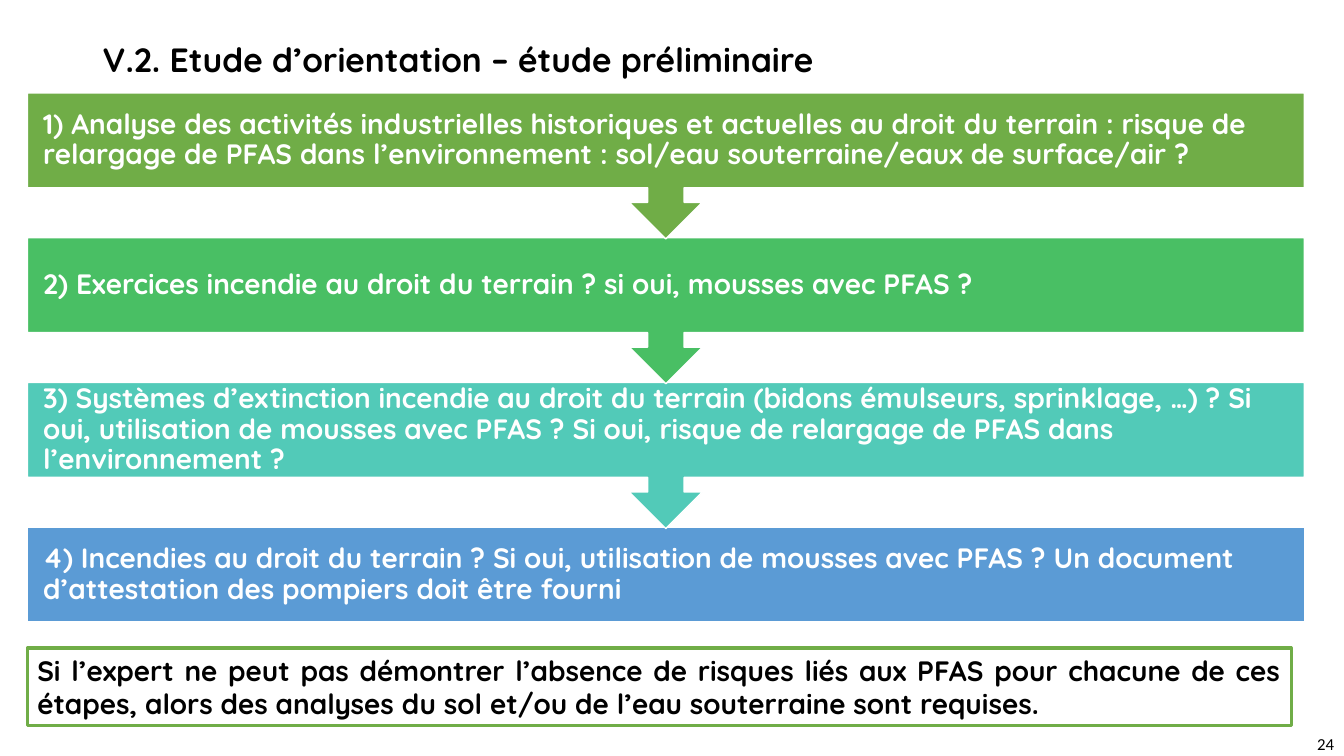
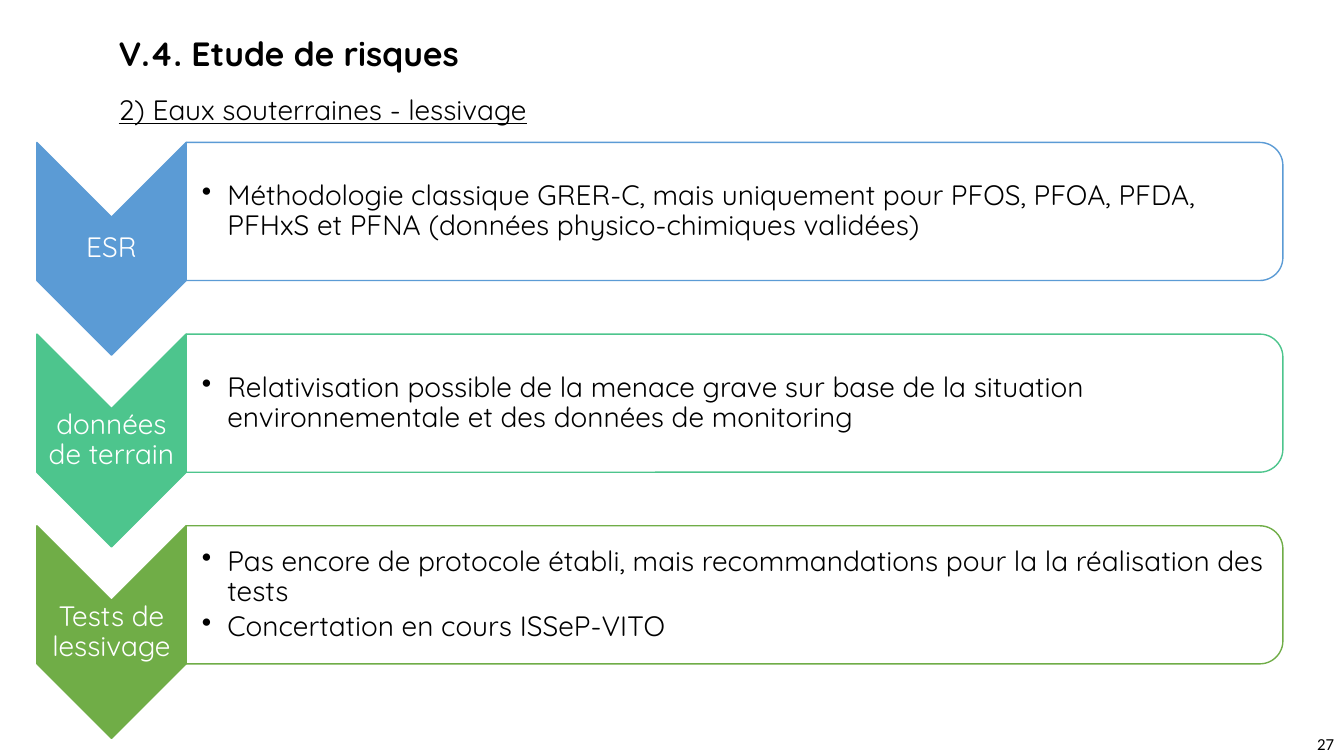
from lxml import etree
from pptx import Presentation
from pptx.dml.color import RGBColor
from pptx.enum import shapes, text
from pptx.oxml import ns
from pptx.util import Cm, Pt

BLACK = RGBColor(0, 0, 0)
WHITE = RGBColor(0xFF, 0xFF, 0xFF)
GREEN = RGBColor(0x70, 0xAD, 0x47)
EMERALD = RGBColor(0x49, 0xBF, 0x64)
TURQUOISE = RGBColor(0x52, 0xCA, 0xB8)
MINT = RGBColor(0x4D, 0xC5, 0x8D)
BLUE = RGBColor(0x5B, 0x9B, 0xD5)

FONT = "Quicksand"
PRESET = shapes.MSO_SHAPE
ALIGN = text.PP_ALIGN
MIDDLE = text.MSO_ANCHOR.MIDDLE
INSETS = (0.25, 0.13, 0.25, 0.13)

STEP_TOP, STEP_PITCH = 2.34, 3.65
STEP_HEIGHT, CALLOUT_HEIGHT = 2.39, 3.68
STEPS = [
    (GREEN, "1) Analyse des activités industrielles historiques et actuelles au droit du terrain : "
            "risque de relargage de PFAS dans l’environnement : sol/eau souterraine/eaux de surface/air ?"),
    (EMERALD, "2) Exercices incendie au droit du terrain ? si oui, mousses avec PFAS ?"),
    (TURQUOISE, "3) Systèmes d’extinction incendie au droit du terrain (bidons émulseurs, sprinklage, …) ? "
                "Si oui, utilisation de mousses avec PFAS ? Si oui, risque de relargage de PFAS "
                "dans l’environnement ?"),
    (BLUE, "4) Incendies au droit du terrain ? Si oui, utilisation de mousses avec PFAS ? "
           "Un document d’attestation des pompiers doit être fourni"),
]

STAGE_CENTRE, STAGE_PITCH = 5.33, 4.83
CHEVRON_LEFT, CHEVRON_WIDTH, CHEVRON_HEIGHT = 0.93, 3.76, 5.36
CHEVRON_DROP = 0.94
PANEL_WIDTH, PANEL_HEIGHT = 27.64, 3.48
STAGES = [
    (BLUE, "ESR",
     ["Méthodologie classique GRER-C, mais uniquement pour PFOS, PFOA, PFDA, PFHxS et PFNA "
      "(données physico-chimiques validées)"]),
    (MINT, "données de terrain",
     ["Relativisation possible de la menace grave sur base de la situation environnementale "
      "et des données de monitoring"]),
    (GREEN, "Tests de lessivage",
     ["Pas encore de protocole établi, mais recommandations pour la la réalisation des tests",
      "Concertation en cours ISSeP-VITO"]),
]


def add_bullet(paragraph):
    properties = paragraph._p.get_or_add_pPr()
    properties.set("marL", str(Cm(0.64)))
    properties.set("indent", str(-Cm(0.64)))
    etree.SubElement(properties, ns.qn("a:buChar"), char="•")


def write(shape, lines, size=20, color=BLACK, bold=False, underline=None, font=FONT,
          align=ALIGN.LEFT, anchor=text.MSO_ANCHOR.TOP, insets=INSETS, spacing=1.0, bullets=False):
    frame = shape.text_frame
    frame.word_wrap = True
    frame.vertical_anchor = anchor
    (frame.margin_left, frame.margin_top,
     frame.margin_right, frame.margin_bottom) = [Cm(inset) for inset in insets]
    for index, line in enumerate(lines):
        paragraph = frame.add_paragraph() if index else frame.paragraphs[0]
        paragraph.text = line
        paragraph.alignment = align
        paragraph.line_spacing = spacing
        if bullets:
            paragraph.space_after = Pt(3)
            add_bullet(paragraph)
        paragraph.font.name = font
        paragraph.font.size = Pt(size)
        paragraph.font.bold = bold
        paragraph.font.underline = underline
        paragraph.font.color.rgb = color


def add_text(slide, left, top, width, height, lines, **style):
    box = slide.shapes.add_textbox(Cm(left), Cm(top), Cm(width), Cm(height))
    write(box, lines, **style)


def add_block(slide, preset, left, top, width, height, fill, line, weight=1):
    block = slide.shapes.add_shape(preset, Cm(left), Cm(top), Cm(width), Cm(height))
    block.shadow.inherit = False
    block.fill.solid()
    block.fill.fore_color.rgb = fill
    block.line.color.rgb = line
    block.line.width = Pt(weight)
    return block


def add_turned_block(slide, preset, left, centre, width, height, fill, line):
    block = add_block(slide, preset, left + (width - height) / 2, centre - width / 2,
                      height, width, fill, line)
    block.rotation = 90


def add_page(deck, title, left, top, number):
    slide = deck.slides.add_slide(deck.slide_layouts[6])
    add_text(slide, left, top, 28, 1.27, [title], size=24, bold=True)
    add_text(slide, 26.25, 18.36, 7.62, 0.76, [str(number)], size=12, font="Calibri",
             align=ALIGN.RIGHT, anchor=MIDDLE)
    return slide


def add_step(slide, index, color, wording):
    last = index == len(STEPS) - 1
    preset = PRESET.RECTANGLE if last else PRESET.DOWN_ARROW_CALLOUT
    height = STEP_HEIGHT if last else CALLOUT_HEIGHT
    step = add_block(slide, preset, 0.69, STEP_TOP + index * STEP_PITCH, 32.18, height, color, WHITE)
    write(step, [wording], color=WHITE, bold=True, anchor=MIDDLE,
          insets=(0.4, 0, 0.4, 0), spacing=0.9)


def add_stage(slide, index, color, label, points):
    centre = STAGE_CENTRE + index * STAGE_PITCH
    chevron_centre = centre + CHEVRON_DROP
    panel_left = CHEVRON_LEFT + CHEVRON_WIDTH
    add_turned_block(slide, PRESET.CHEVRON, CHEVRON_LEFT, chevron_centre,
                     CHEVRON_WIDTH, CHEVRON_HEIGHT, color, color)
    add_text(slide, CHEVRON_LEFT, chevron_centre - 0.8, CHEVRON_WIDTH, 1.6, [label], color=WHITE,
             align=ALIGN.CENTER, anchor=MIDDLE, insets=(0.03,) * 4, spacing=0.9)
    add_turned_block(slide, PRESET.ROUND_2_SAME_RECTANGLE, panel_left, centre,
                     PANEL_WIDTH, PANEL_HEIGHT, WHITE, color)
    add_text(slide, panel_left, centre - 1.57, 27.46, 3.14, points, anchor=MIDDLE,
             insets=(0.4, 0.03, 0.03, 0.03), spacing=0.9, bullets=True)


def build_preliminary_study(deck):
    slide = add_page(deck, "V.2. Etude d’orientation – étude préliminaire", 2.34, 0.84, 24)
    for index in reversed(range(len(STEPS))):
        add_step(slide, index, *STEPS[index])
    conclusion = add_block(slide, PRESET.RECTANGLE, 0.69, 16.33, 31.85, 1.96, WHITE, GREEN, 2.25)
    write(conclusion, ["Si l’expert ne peut pas démontrer l’absence de risques liés aux PFAS pour chacune "
                       "de ces étapes, alors des analyses du sol et/ou de l’eau souterraine sont requises."],
          bold=True, align=ALIGN.JUSTIFY)


def build_risk_study(deck):
    slide = add_page(deck, "V.4. Etude de risques", 2.74, 0.69, 27)
    add_text(slide, 2.74, 2.21, 26.64, 1.1, ["2) Eaux souterraines - lessivage"], underline=True)
    for index, stage in enumerate(STAGES):
        add_stage(slide, index, *stage)


def main():
    deck = Presentation()
    deck.slide_width, deck.slide_height = Cm(33.87), Cm(19.05)
    build_preliminary_study(deck)
    build_risk_study(deck)
    deck.save("out.pptx")


if __name__ == "__main__":
    main()
